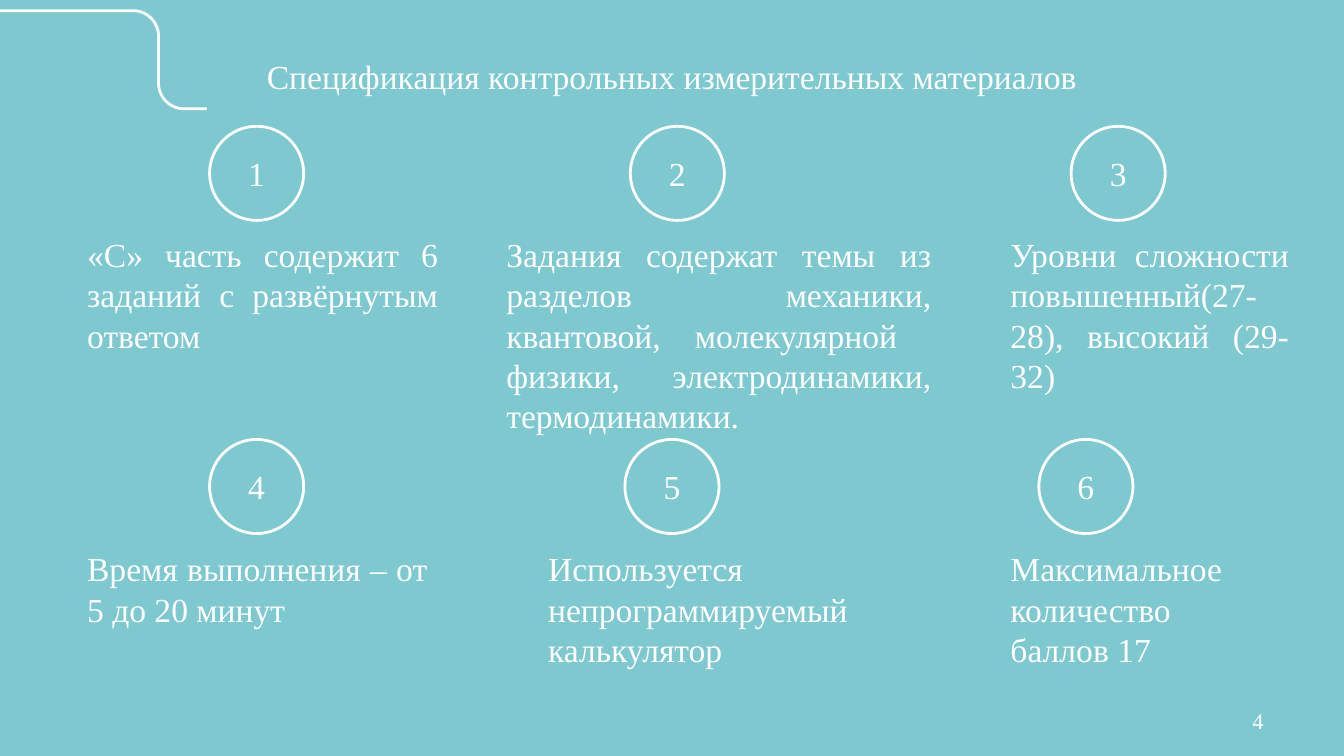
"""Build the slide that outlines the specification of the test materials."""
import dataclasses
import math

import pptx
import pptx.dml.color
import pptx.enum.shapes
import pptx.enum.text
import pptx.util

Inches = pptx.util.Inches
Align = pptx.enum.text.PP_ALIGN
Anchor = pptx.enum.text.MSO_ANCHOR

TEAL = pptx.dml.color.RGBColor(0x7E, 0xC8, 0xD0)
WHITE = pptx.dml.color.RGBColor(0xFF, 0xFF, 0xFF)
FONT = "Times New Roman"
CIRCLE_SIZE = 0.7
LINE_WIDTH = pptx.util.Pt(1.5)


@dataclasses.dataclass(frozen=True)
class Row:
    circle_top: float
    text_top: float


@dataclasses.dataclass(frozen=True)
class Point:
    row: Row
    circle_left: float
    text_left: float
    text_width: float
    text_height: float
    wording: str


UPPER = Row(0.94, 1.64)
LOWER = Row(3.27, 3.98)
POINTS = [
    Point(UPPER, 1.56, 0.55, 2.81, 1.02, "«С» часть содержит 6 заданий с развёрнутым ответом"),
    Point(UPPER, 4.69, 3.67, 3.36, 0.86,
          "Задания содержат темы из разделов механики, квантовой, молекулярной  физики, "
          "электродинамики, термодинамики."),
    Point(UPPER, 7.97, 7.42, 2.27, 1.02, "Уровни сложности повышенный(27-28), высокий (29-32)"),
    Point(LOWER, 1.56, 0.55, 2.73, 0.86, "Время выполнения – от 5 до 20 минут"),
    Point(LOWER, 4.65, 3.98, 2.5, 0.94, "Используется\nнепрограммируемый\nкалькулятор"),
    Point(LOWER, 7.73, 7.42, 2.18, 1.09, "Максимальное количество баллов 17"),
]


def write(shape, wording: str, align: Align, anchor: Anchor, size: float = 18) -> None:
    frame = shape.text_frame
    frame.text = wording
    frame.word_wrap = True
    frame.auto_size = pptx.enum.text.MSO_AUTO_SIZE.NONE
    frame.vertical_anchor = anchor
    frame.margin_left = frame.margin_right = Inches(0.1)
    frame.margin_top = frame.margin_bottom = Inches(0.1)
    for paragraph in frame.paragraphs:
        paragraph.alignment = align
        paragraph.line_spacing = 1.0
        paragraph.space_before = pptx.util.Pt(0)
        for run in paragraph.runs:
            run.font.name = FONT
            run.font.size = pptx.util.Pt(size)
            run.font.color.rgb = WHITE


def draw_circle(slide, point: Point, number: int) -> None:
    circle = slide.shapes.add_shape(
        pptx.enum.shapes.MSO_SHAPE.OVAL, Inches(point.circle_left),
        Inches(point.row.circle_top), Inches(CIRCLE_SIZE), Inches(CIRCLE_SIZE))
    circle.shadow.inherit = False
    circle.fill.solid()
    circle.fill.fore_color.rgb = TEAL
    circle.line.color.rgb = WHITE
    circle.line.width = LINE_WIDTH
    write(circle, str(number), Align.CENTER, Anchor.MIDDLE)


def draw_text(slide, point: Point) -> None:
    description = slide.shapes.add_textbox(
        Inches(point.text_left), Inches(point.row.text_top),
        Inches(point.text_width), Inches(point.text_height))
    write(description, point.wording, Align.JUSTIFY, Anchor.TOP)


def arc(x: float, y: float, start: int, end: int) -> list[tuple[float, float]]:
    radius, steps = 0.19, 16
    angles = [math.radians(start + (end - start) * i / steps) for i in range(steps + 1)]
    return [(x + radius * math.cos(a), y + radius * math.sin(a)) for a in angles]


def draw_corner_line(slide) -> None:
    route = [*arc(0.99, 0.27, -90, 0), *arc(1.37, 0.62, 180, 90), (1.54, 0.81)]
    builder = slide.shapes.build_freeform(0, Inches(0.08), scale=1.0)
    builder.add_line_segments([(Inches(x), Inches(y)) for x, y in route], close=False)
    corner_line = builder.convert_to_shape()
    corner_line.shadow.inherit = False
    corner_line.fill.background()
    corner_line.line.color.rgb = WHITE
    corner_line.line.width = LINE_WIDTH


def main() -> None:
    deck = pptx.Presentation()
    deck.slide_width = Inches(10)
    deck.slide_height = deck.slide_width * 9 // 16
    slide = deck.slides.add_slide(deck.slide_layouts[5])
    slide.background.fill.solid()
    slide.background.fill.fore_color.rgb = TEAL

    title = slide.shapes.title
    title.left, title.top = Inches(0), Inches(0.31)
    title.width, title.height = Inches(10), Inches(0.51)
    write(title, "Спецификация контрольных измерительных материалов", Align.CENTER, Anchor.BOTTOM)

    for number, point in enumerate(POINTS, start=1):
        draw_circle(slide, point, number)
    for point in POINTS:
        draw_text(slide, point)
    draw_corner_line(slide)

    page_number = slide.shapes.add_textbox(Inches(7.17), Inches(5.21), Inches(2.33), Inches(0.3))
    write(page_number, "4", Align.RIGHT, Anchor.MIDDLE, size=12)
    deck.save("out.pptx")


if __name__ == "__main__":
    main()
